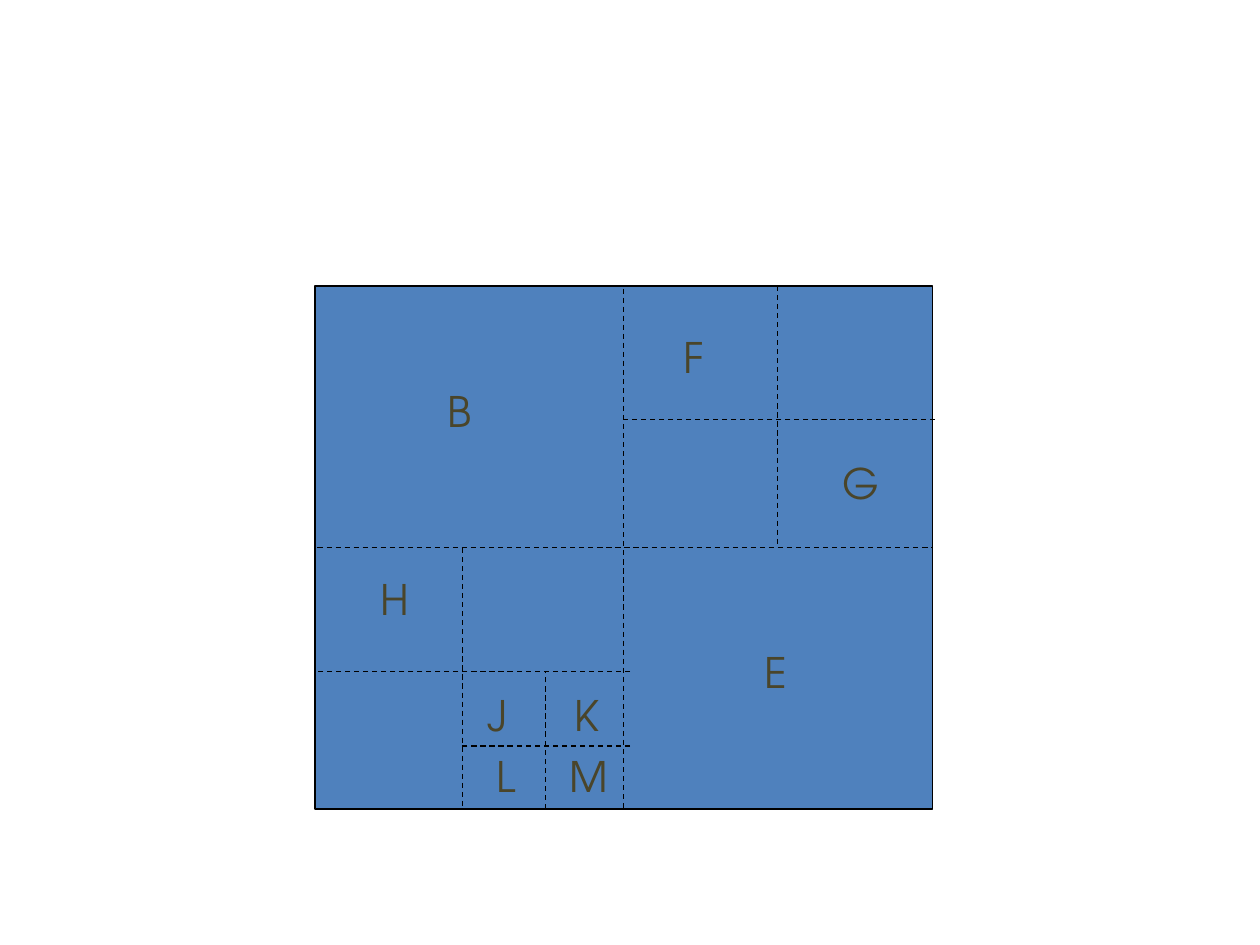
from pptx import Presentation
from pptx import util as u
from pptx.dml.color import RGBColor
from pptx.enum import dml, shapes, text
from pptx.oxml.ns import qn
from lxml import etree

COLORS = {"region": "4F81BD", "line": "000000", "label": "4A452A"}
LEFT, TOP, WIDTH, HEIGHT = 2.5, 2.27, 4.9, 4.15
BOTTOM = TOP + HEIGHT
CENTER_X, CENTER_Y = LEFT + WIDTH / 2, TOP + HEIGHT / 2
BOTTOM_SITE, RIGHT_SITE = 2, 3

SPLITS = [
    (6.17, TOP, 6.17, CENTER_Y),
    (7.42, 3.33, 4.92, 3.33),
    (5, 5.33, LEFT, 5.33),
    (3.67, 4.35, 3.67, BOTTOM),
    (5, 5.92, 3.67, 5.92),
    (4.33, BOTTOM, 4.33, 5.33),
]

LABELS = [
    ("B", 3.45, 3.01, 0.44),
    ("F", 5.33, 2.58, 0.41),
    ("G", 6.59, 3.58, 0.47),
    ("H", 2.92, 4.5, 0.46),
    ("K", 4.46, 5.42, 0.46),
    ("J", 3.77, 5.42, 0.39),
    ("M", 4.42, 5.91, 0.48),
    ("L", 3.84, 5.91, 0.41),
    ("E", 5.97, 5.08, 0.43),
]


class Page:
    font = {"name": "TeX Gyre Adventor", "size": u.Pt(24)}
    frame = {"word_wrap": False, "auto_size": text.MSO_AUTO_SIZE.SHAPE_TO_FIT_TEXT}
    solid = {"width": u.Pt(0.75)}
    dashed = {"width": u.Pt(0.75), "dash_style": dml.MSO_LINE.DASH}

    def __init__(self, deck):
        self.slide = deck.slides.add_slide(deck.slide_layouts[6])

    def apply(self, target, values):
        for name, value in values.items():
            setattr(target, name, value)

    def color(self, name):
        return RGBColor.from_string(COLORS[name])

    def outline(self, line, values):
        line.color.rgb = self.color("line")
        self.apply(line, values)

    def region(self, *bounds):
        box = self.slide.shapes.add_shape(
            shapes.MSO_SHAPE.RECTANGLE, *map(u.Inches, bounds))
        box.shadow.inherit = False
        box.fill.solid()
        box.fill.fore_color.rgb = self.color("region")
        self.outline(box.line, self.solid)
        return box

    def split(self, *ends):
        connector = self.slide.shapes.add_connector(
            shapes.MSO_CONNECTOR.STRAIGHT, *map(u.Inches, ends))
        self.outline(connector.line, self.dashed)
        etree.SubElement(connector.element.spPr, qn("a:effectLst"))
        return connector

    def label(self, letter, left, top, width):
        box = self.slide.shapes.add_textbox(*map(u.Inches, (left, top, width, 0.5)))
        self.apply(box.text_frame, self.frame)
        span = box.text_frame.paragraphs[0].add_run()
        span.text = letter
        self.apply(span.font, self.font)
        span.font.color.rgb = self.color("label")


def main():
    deck = Presentation()
    deck.slide_width, deck.slide_height = u.Inches(10), u.Inches(7.5)
    page = Page(deck)
    region = page.region(LEFT, TOP, WIDTH, HEIGHT)
    across = page.split(2.52, CENTER_Y, LEFT + WIDTH, CENTER_Y)
    across.end_connect(region, RIGHT_SITE)
    down = page.split(CENTER_X, 2.29, CENTER_X, BOTTOM)
    down.end_connect(region, BOTTOM_SITE)
    for ends in SPLITS:
        page.split(*ends)
    for label in LABELS:
        page.label(*label)
    deck.save("out.pptx")


if __name__ == "__main__":
    main()
